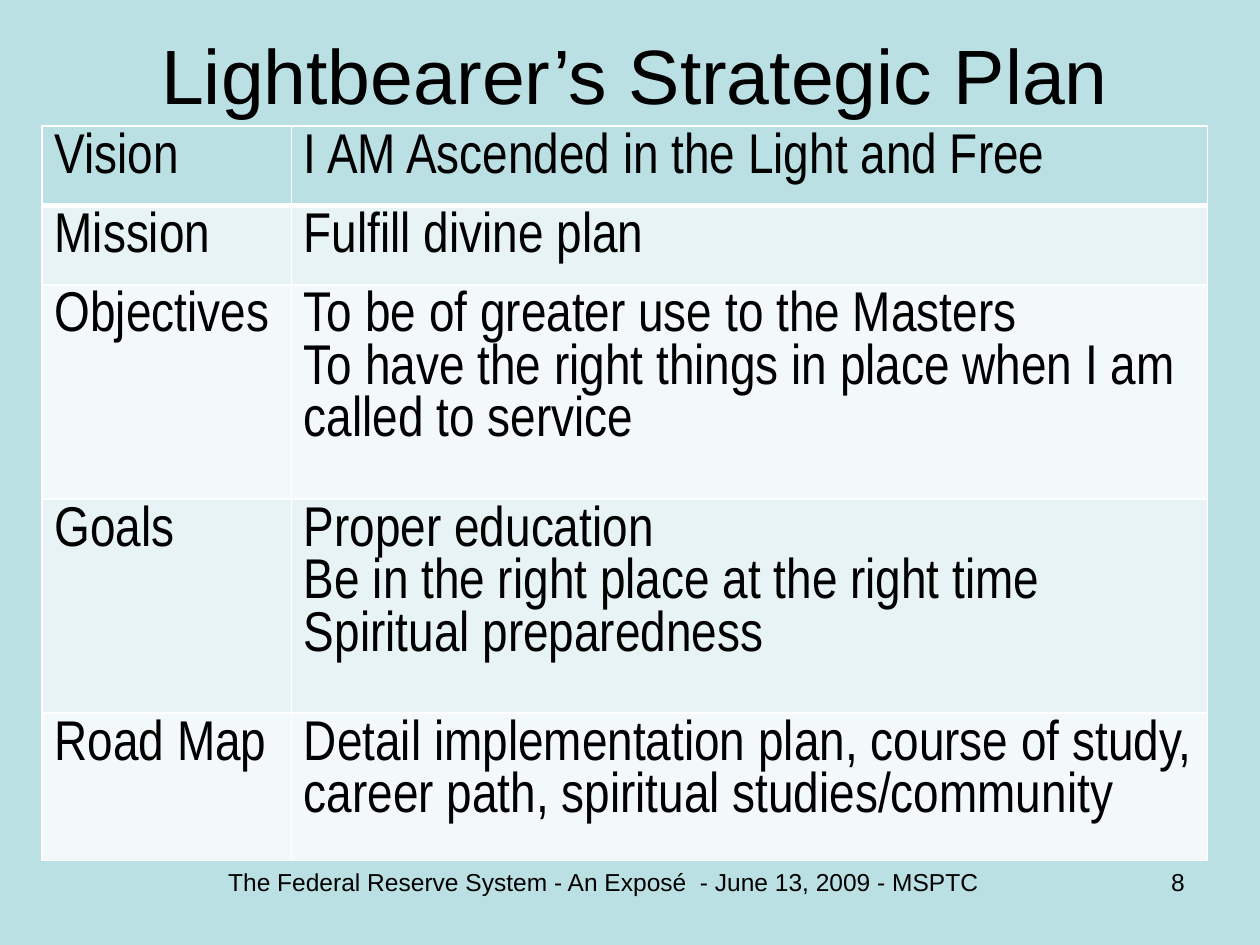
import pptx
import pptx.dml.color
import pptx.enum.text
import pptx.oxml
import pptx.oxml.ns
import pptx.util

Pt = pptx.util.Pt
ALIGN = pptx.enum.text.PP_ALIGN
ANCHOR = pptx.enum.text.MSO_ANCHOR

BACKGROUND = "BBE0E3"
BAND_FILLS = ("F3F9FA", "E7F3F4")
BORDER = "FFFFFF"
TEXT = "000000"

PLAN = [
    ("Vision", ["I AM Ascended in the Light and Free"]),
    ("Mission", ["Fulfill divine plan"]),
    ("Objectives", ["To be of greater use to the Masters",
                    "To have the right things in place when I am called to service"]),
    ("Goals", ["Proper education",
               "Be in the right place at the right time",
               "Spiritual preparedness"]),
    ("Road Map", ["Detail implementation plan, course of study, "
                  "career path, spiritual studies/community"]),
]
COLUMN_WIDTHS = (142.5, 523.5)
ROW_HEIGHTS = (45.4, 45.4, 122.4, 122.4, 84.2)


def color(hex_string):
    return pptx.dml.color.RGBColor.from_string(hex_string)


def fill_solid(fill, hex_string):
    fill.solid()
    fill.fore_color.rgb = color(hex_string)


def format_text(text_frame, size, font_name, alignment):
    for paragraph in text_frame.paragraphs:
        paragraph.alignment = alignment
        for run in paragraph.runs:
            run.font.size = Pt(size)
            run.font.name = font_name
            run.font.color.rgb = color(TEXT)


def add_title(slide, text):
    title = slide.shapes.title
    title.left, title.top, title.width, title.height = Pt(42), Pt(18), Pt(642), Pt(48)
    title.text_frame.text = text
    title.text_frame.word_wrap = True
    title.text_frame.auto_size = pptx.enum.text.MSO_AUTO_SIZE.NONE
    title.text_frame.vertical_anchor = ANCHOR.MIDDLE
    format_text(title.text_frame, 44, "Arial", ALIGN.CENTER)


def add_footer_text(slide, text, left, width, alignment):
    box = slide.shapes.add_textbox(Pt(left), Pt(492), Pt(width), Pt(37.5))
    box.text_frame.word_wrap = True
    box.text_frame.text = text
    format_text(box.text_frame, 14, "Arial", alignment)


def set_borders(cell, widths):
    properties = cell._tc.get_or_add_tcPr()
    namespace = pptx.oxml.ns.nsdecls("a")
    for side, width in zip("LRTB", widths):
        properties.append(pptx.oxml.parse_xml(
            f'<a:ln{side} {namespace} w="{Pt(width)}"><a:solidFill>'
            f'<a:srgbClr val="{BORDER}"/></a:solidFill></a:ln{side}>'))


def format_cell(cell, lines, row_index):
    cell.text_frame.text = "\n".join(lines)
    format_text(cell.text_frame, 32, "Arial Narrow", ALIGN.LEFT)
    # The heading row is set off by a thicker rule
    top = 3 if row_index == 1 else 1
    bottom = 3 if row_index == 0 else 1
    set_borders(cell, (1, 1, top, bottom))
    fill_solid(cell.fill, BAND_FILLS[row_index % 2] if row_index else BACKGROUND)


def add_plan_table(slide):
    frame = slide.shapes.add_table(len(PLAN), len(COLUMN_WIDTHS), Pt(24), Pt(72),
                                   Pt(sum(COLUMN_WIDTHS)), Pt(sum(ROW_HEIGHTS)))
    table = frame.table
    for column, width in zip(table.columns, COLUMN_WIDTHS):
        column.width = Pt(width)
    for row_index, (label, lines) in enumerate(PLAN):
        table.rows[row_index].height = Pt(ROW_HEIGHTS[row_index])
        format_cell(table.cell(row_index, 0), [label], row_index)
        format_cell(table.cell(row_index, 1), lines, row_index)


def main():
    presentation = pptx.Presentation()
    presentation.slide_width, presentation.slide_height = Pt(720), Pt(540)
    slide = presentation.slides.add_slide(presentation.slide_layouts[5])
    fill_solid(slide.background.fill, BACKGROUND)

    # Title and plan
    add_title(slide, "Lightbearer’s Strategic Plan")
    add_plan_table(slide)

    # Page number and footer
    add_footer_text(slide, "8", 516, 168, ALIGN.RIGHT)
    add_footer_text(slide, "The Federal Reserve System - An Exposé  - June 13, 2009 - MSPTC",
                    42, 606, ALIGN.CENTER)

    presentation.save("out.pptx")


if __name__ == "__main__":
    main()
